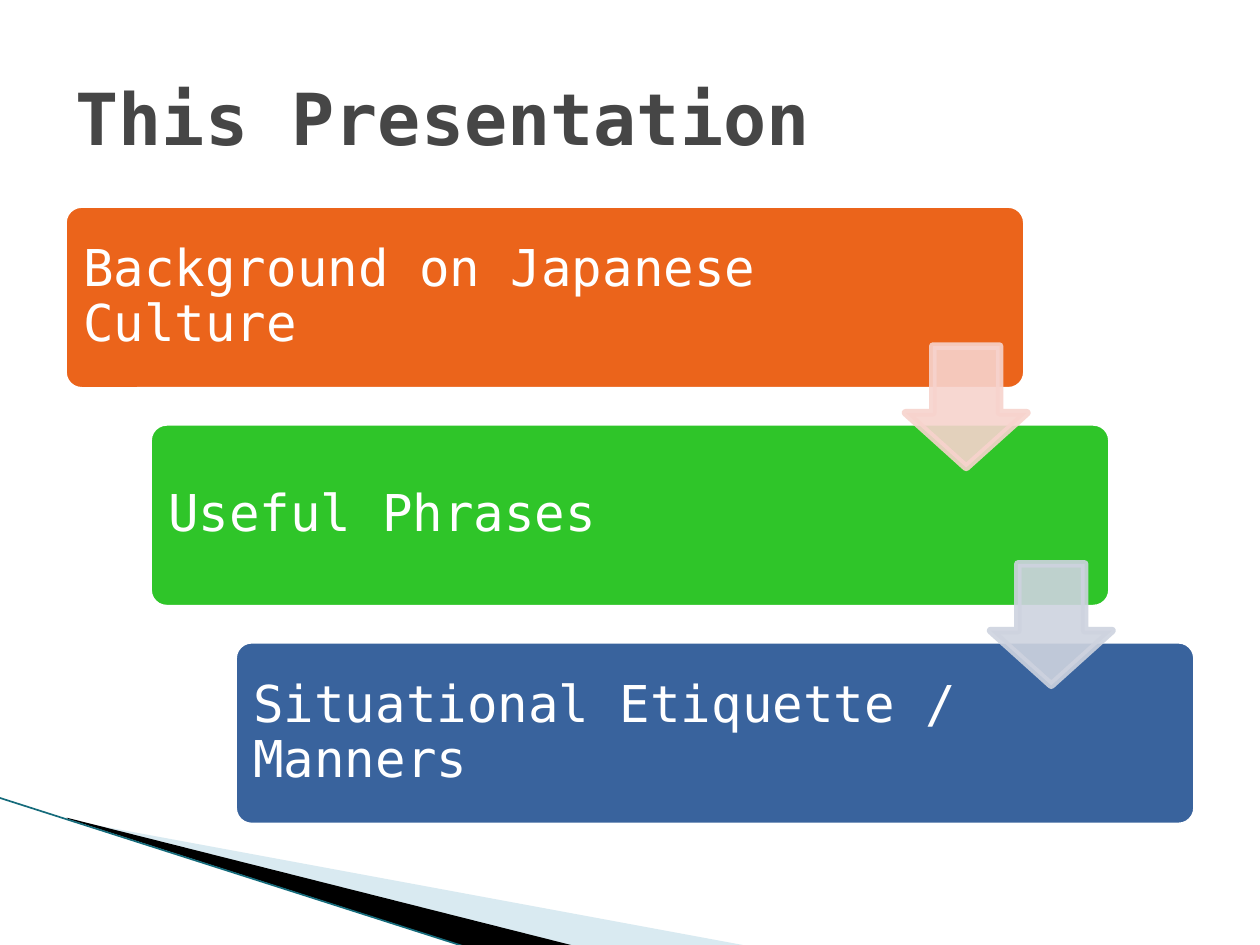
from lxml import etree
from pptx import Presentation
from pptx import util as u
from pptx.dml.color import RGBColor
from pptx.enum import shapes, text
from pptx.oxml.ns import qn

FONT = "DejaVu Sans Mono"
COLORS = {
    "white": "FFFFFF", "title": "464646", "black": "000000",
    "pale_blue": "A0CBDC", "edge": "156B7B",
    "orange": "EB641B", "green": "2FC529", "blue": "39639D",
    "pink": "F7D3CD", "grey": "CED3DF",
}
TOPICS = [
    ("Background on Japanese Culture", "orange", 6.05),
    ("Useful Phrases", "green", 5.92),
    ("Situational Etiquette / Manners", "blue", 5.92),
]
ARROW_COLORS = ["pink", "grey"]


def paint(fill, color, opacity=100):
    """Set a solid fill, with opacity in percent."""
    fill.solid()
    fill.fore_color.rgb = RGBColor.from_string(COLORS[color])
    if opacity < 100:
        srgb = fill._xPr.find(".//" + qn("a:srgbClr"))
        etree.SubElement(srgb, qn("a:alpha"), val=str(opacity * 1000))


def write(frame, words, size, color, bold=False, inset=0.1, spacing=None):
    frame.word_wrap = True
    frame.vertical_anchor = text.MSO_ANCHOR.MIDDLE
    frame.margin_left = frame.margin_right = u.Inches(inset)
    frame.margin_top = frame.margin_bottom = u.Inches(inset)
    paragraph = frame.paragraphs[0]
    paragraph.alignment = text.PP_ALIGN.LEFT
    paragraph.line_spacing = spacing
    run = paragraph.add_run()
    run.text = words
    run.font.name, run.font.size, run.font.bold = FONT, u.Pt(size), bold
    run.font.color.rgb = RGBColor.from_string(COLORS[color])


def add_block(slide, kind, box, adjustments, fill, line, opacity=100):
    block = slide.shapes.add_shape(kind, *map(u.Inches, box))
    block.shadow.inherit = False
    for index, value in enumerate(adjustments):
        block.adjustments[index] = value
    paint(block.fill, fill, opacity)
    paint(block.line.fill, line, opacity)
    block.line.width = u.Pt(4.33)


def add_title(slide, left, top, width, height):
    title = slide.shapes.title
    title.left, title.top = u.Inches(left), u.Inches(top)
    title.width, title.height = u.Inches(width), u.Inches(height)
    write(title.text_frame, "This Presentation", 41, "title", bold=True)


def add_wedge(slide, points, color, opacity=100):
    builder = slide.shapes.build_freeform(*points[0])
    builder.add_line_segments(points[1:], close=True)
    wedge = builder.convert_to_shape()
    wedge.shadow.inherit = False
    paint(wedge.fill, color, opacity)
    wedge.line.fill.background()


def add_corner_sweep(slide, left, top):
    """Draw the two wedges and the edge line that fan out from a point."""
    def place(*offsets):
        return [(u.Inches(left + x), u.Inches(top + y)) for x, y in offsets]

    add_wedge(slide, place((0.02, 0.02), (5.42, 1.02), (4.03, 1.02), (0.02, 0.01)),
              "pale_blue", 40)
    add_wedge(slide, place((0, 0), (4.04, 1.02), (3.19, 1.03), (0.01, 0.01)), "black")
    start, end = place((-0.54, -0.16), (3.18, 1.03))
    edge = slide.shapes.add_connector(shapes.MSO_CONNECTOR.STRAIGHT, *start, *end)
    paint(edge.line.fill, "edge")
    edge.line.width = u.Pt(0.95)
    etree.SubElement(edge._element.spPr, qn("a:effectLst"))


def add_staircase(slide, left, top, width, height):
    """Step the topics down to the right, with an arrow from each to the next."""
    step_width, step_height = width * 0.85, height * 0.3
    shift = (width - step_width) / (len(TOPICS) - 1)
    drop = (height - step_height) / (len(TOPICS) - 1)
    pad, arrow = 0.04, step_height * 0.65

    for row, (topic, color, text_width) in enumerate(TOPICS):
        x, y = left + row * shift, top + row * drop
        add_block(slide, shapes.MSO_SHAPE.ROUNDED_RECTANGLE,
                  (x, y, step_width, step_height), [0.1], color, "white")
        label = slide.shapes.add_textbox(*map(
            u.Inches, (x + pad, y + pad, text_width, step_height - 2 * pad)))
        write(label.text_frame, topic, 29, "white", inset=0.12, spacing=0.9)

    for row, color in enumerate(ARROW_COLORS):
        x = left + row * shift + step_width - arrow
        y = top + row * drop + step_height * 0.76
        add_block(slide, shapes.MSO_SHAPE.DOWN_ARROW, (x, y, arrow, arrow),
                  [0.55, 0.45], color, color, opacity=90)


def main():
    deck = Presentation()
    deck.slide_width, deck.slide_height = u.Inches(10), u.Inches(7.5)
    slide = deck.slides.add_slide(deck.slide_layouts[5])
    paint(slide.background.fill, "white")
    add_corner_sweep(slide, 0.53, 6.49)
    add_staircase(slide, 0.5, 1.62, 9, 4.94)
    add_title(slide, 0.5, 0.3, 9, 1.25)
    deck.save("out.pptx")


if __name__ == "__main__":
    main()
